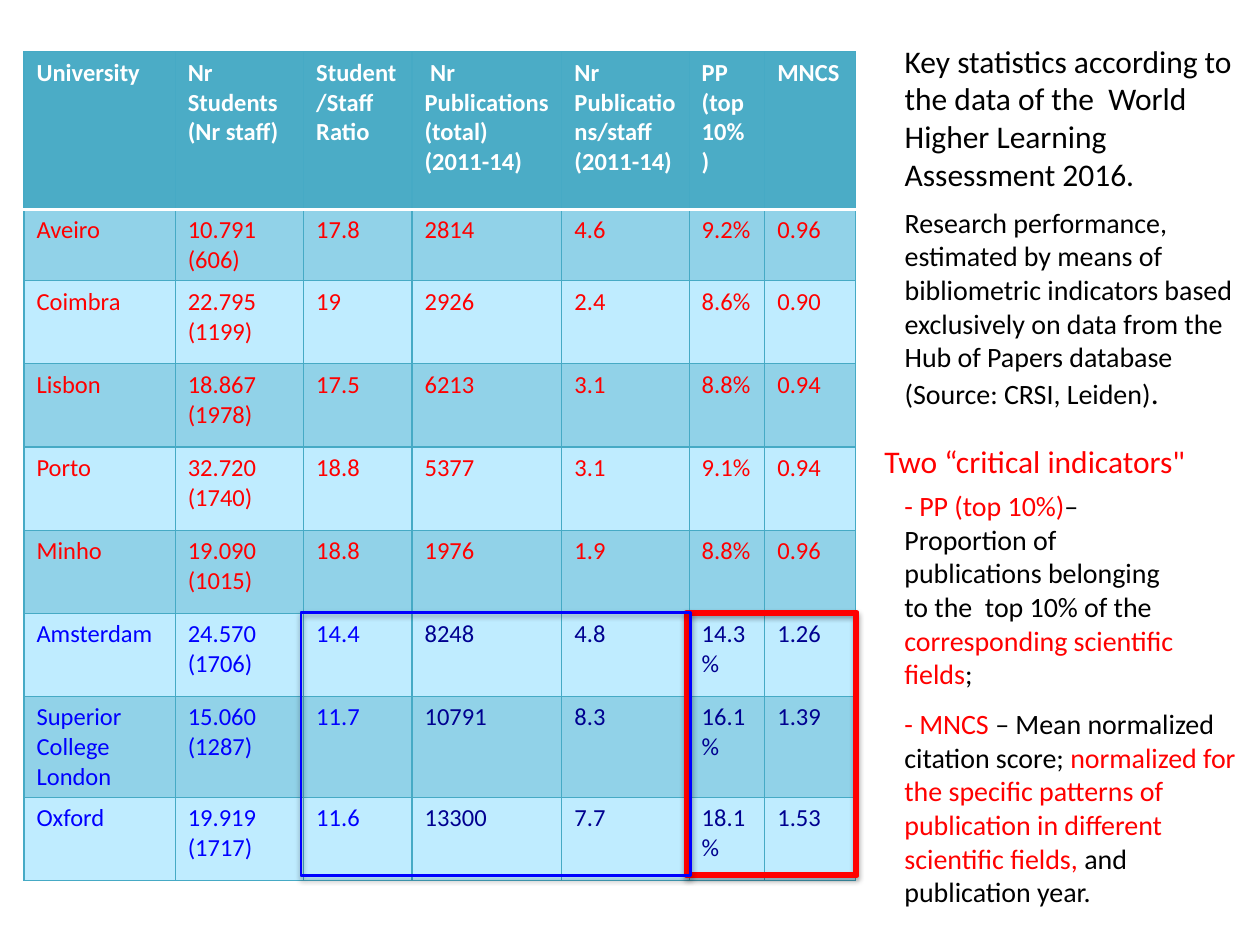
from lxml.etree import SubElement
from pptx import Presentation
from pptx.dml.color import RGBColor
from pptx.enum.shapes import MSO_SHAPE as Preset
from pptx.enum.text import MSO_ANCHOR as Anchor, MSO_AUTO_SIZE as AutoSize, PP_ALIGN as Align
from pptx.oxml import parse_xml
from pptx.oxml.ns import nsdecls, qn
from pptx.util import Inches, Pt

THEME = {
    "font": "Calibri", "lead": 18, "body": 16, "cell": 14,
    "black": "000000", "white": "FFFFFF", "red": "FF0000", "blue": "0000FF", "navy": "000090",
    "header": "4BACC6", "band": "91D2E8", "plain": "BFECFF", "grid": "46AAC5",
    "deep": "3F80CE", "pale": "A4C4FF",
}

deck = Presentation()
deck.slide_width, deck.slide_height = Inches(10), Inches(7.5)
COL, ROW = deck.slide_width / 100, deck.slide_height / 100
slide = deck.slides.add_slide(deck.slide_layouts[1])


def rgb(name):
    return RGBColor.from_string(THEME[name])


def write(frame, *paragraphs, size="body", color="black", bold=False):
    for index, pieces in enumerate(paragraphs):
        paragraph = frame.paragraphs[0] if index == 0 else frame.add_paragraph()
        paragraph.alignment = Align.LEFT
        paragraph.space_before = Pt(0)
        for piece in [pieces] if isinstance(pieces, str) else pieces:
            text, tint, scale = piece if isinstance(piece, tuple) else (piece, color, size)
            run = paragraph.add_run()
            run.text = text
            run.font.name = THEME["font"]
            run.font.size = Pt(THEME[scale])
            run.font.bold = bold
            run.font.color.rgb = rgb(tint)


widths = [12, 10.2, 8.6, 11.9, 10.1, 6, 7.2]
heights = [16.67, 6.8] + [8.8] * 7
headings = [
    ["University"], ["Nr Students", "(Nr staff)"], ["Student", "/Staff", "Ratio"],
    [" Nr Publications (total)(2011-14)"], ["Nr", "Publications/staff (2011-14)"],
    ["PP (top 10%)"], ["MNCS"],
]
universities = [
    ("Aveiro", "10.791\n(606)", "17.8", "2814", "4.6", "9.2%", "0.96"),
    ("Coimbra", "22.795\n(1199)", "19", "2926", "2.4", "8.6%", "0.90"),
    ("Lisbon", "18.867\n(1978)", "17.5", "6213", "3.1", "8.8%", "0.94"),
    ("Porto", "32.720\n(1740)", "18.8", "5377", "3.1", "9.1%", "0.94"),
    ("Minho", "19.090\n(1015)", "18.8", "1976", "1.9", "8.8%", "0.96"),
    ("Amsterdam", "24.570\n(1706)", "14.4", "8248", "4.8", "14.3%", "1.26"),
    ("Superior College London", "15.060\n(1287)", "11.7", "10791", "8.3", "16.1%", "1.39"),
    ("Oxford", "19.919 (1717)", "11.6", "13300", "7.7", "18.1%", "1.53"),
]
PORTUGUESE = 5
rows = [headings] + [[value.split("\n") for value in record] for record in universities]

TABLE_LEFT, TABLE_TOP = 1.9, 5.47
statistics = slide.shapes.add_table(
    len(rows), len(widths), int(TABLE_LEFT * COL), int(TABLE_TOP * ROW),
    int(sum(widths) * COL), int(sum(heights) * ROW)).table
for column, width in zip(statistics.columns, widths):
    column.width = int(width * COL)
for row, height in zip(statistics.rows, heights):
    row.height = int(height * ROW)

for r, values in enumerate(rows):
    for c, lines in enumerate(values):
        cell = statistics.cell(r, c)
        if r == 0:
            ink, shade = "white", "header"
        else:
            ink = "red" if r <= PORTUGUESE else "blue" if c < 3 else "navy"
            shade = "band" if r % 2 else "plain"
        write(cell.text_frame, *lines, size="cell", color=ink, bold=r == 0)
        borders = cell._tc.get_or_add_tcPr()
        for side in "LRTB":
            divider = (r, side) in [(0, "B"), (1, "T")]
            edge = SubElement(borders, qn(f"a:ln{side}"), w=str(Pt(2 if divider else 0.75)))
            paint = SubElement(edge, qn("a:solidFill"))
            SubElement(paint, qn("a:srgbClr"), val=THEME["white" if divider else "grid"])
        cell.fill.solid()
        cell.fill.fore_color.rgb = rgb(shade)

heading, source = slide.placeholders
critical, proportion, citation = [slide.shapes.add_textbox(0, 0, 0, 0) for _ in range(3)]
notes = [
    (heading, (70.8, 3.73, 29.2, 21.6), "lead", "black",
     ["Key statistics according to the data of the  World Higher Learning Assessment 2016."]),
    (source, (70.8, 21.07, 28.3, 23.33), "body", "black",
     ["Research performance, estimated by means of bibliometric indicators based exclusively "
      "on data from the Hub of Papers database (Source: CRSI, Leiden)", (".", "black", "lead")]),
    (critical, (69.2, 46.13, 26.5, 5.33), "lead", "red", ["Two “critical indicators\""]),
    (proportion, (70.8, 51.07, 24.4, 22.93), "body", "black",
     [("- PP (top 10%)", "red", "body"),
      "– Proportion of publications belonging to the  top 10% of the ",
      ("corresponding scientific fields", "red", "body"), ";"]),
    (citation, (70.8, 74.13, 29, 22.93), "body", "black",
     [("- MNCS ", "red", "body"), "– Mean normalized citation score; ",
      ("normalized for the specific patterns of publication in different scientific fields, ",
       "red", "body"), "and publication year."]),
]
for note, (left, top, width, height), size, color, pieces in notes:
    note.left, note.width = int(left * COL), int(width * COL)
    note.top, note.height = int(top * ROW), int(height * ROW)
    frame = note.text_frame
    frame.word_wrap = note is not critical
    frame.auto_size = AutoSize.SHAPE_TO_FIT_TEXT
    frame.vertical_anchor = Anchor.TOP
    write(frame, pieces, size=size, color=color)

bullet = source.text_frame.paragraphs[0]._p.get_or_add_pPr()
bullet.set("marL", "0")
bullet.set("indent", "0")
SubElement(bullet, qn("a:buNone"))

highlights = [(5, 7, "red", 3, 0.005), (2, 5, "blue", 1.5, 0)]
for first, last, color, weight, thickness in highlights:
    left = TABLE_LEFT + sum(widths[:first]) - 0.2
    highlight = slide.shapes.add_shape(
        Preset.FRAME, int(left * COL), int(64.8 * ROW),
        int((sum(widths[first:last]) + 0.3) * COL), int(27.87 * ROW))
    highlight.adjustments[0] = thickness
    highlight.fill.gradient()
    highlight.fill.gradient_angle = 90
    for stop, tint in zip(highlight.fill.gradient_stops, ["deep", "pale"]):
        stop.color.rgb = rgb(tint)
    highlight.line.color.rgb = rgb(color)
    highlight.line.width = Pt(weight)
    highlight._element.spPr.append(parse_xml(
        f'<a:effectLst {nsdecls("a")}><a:outerShdw blurRad="{Pt(3.1)}" dist="{Pt(1.8)}" '
        f'dir="5400000" rotWithShape="0"><a:srgbClr val="{THEME["black"]}">'
        '<a:alpha val="35000"/></a:srgbClr></a:outerShdw></a:effectLst>'))

deck.save("out.pptx")
